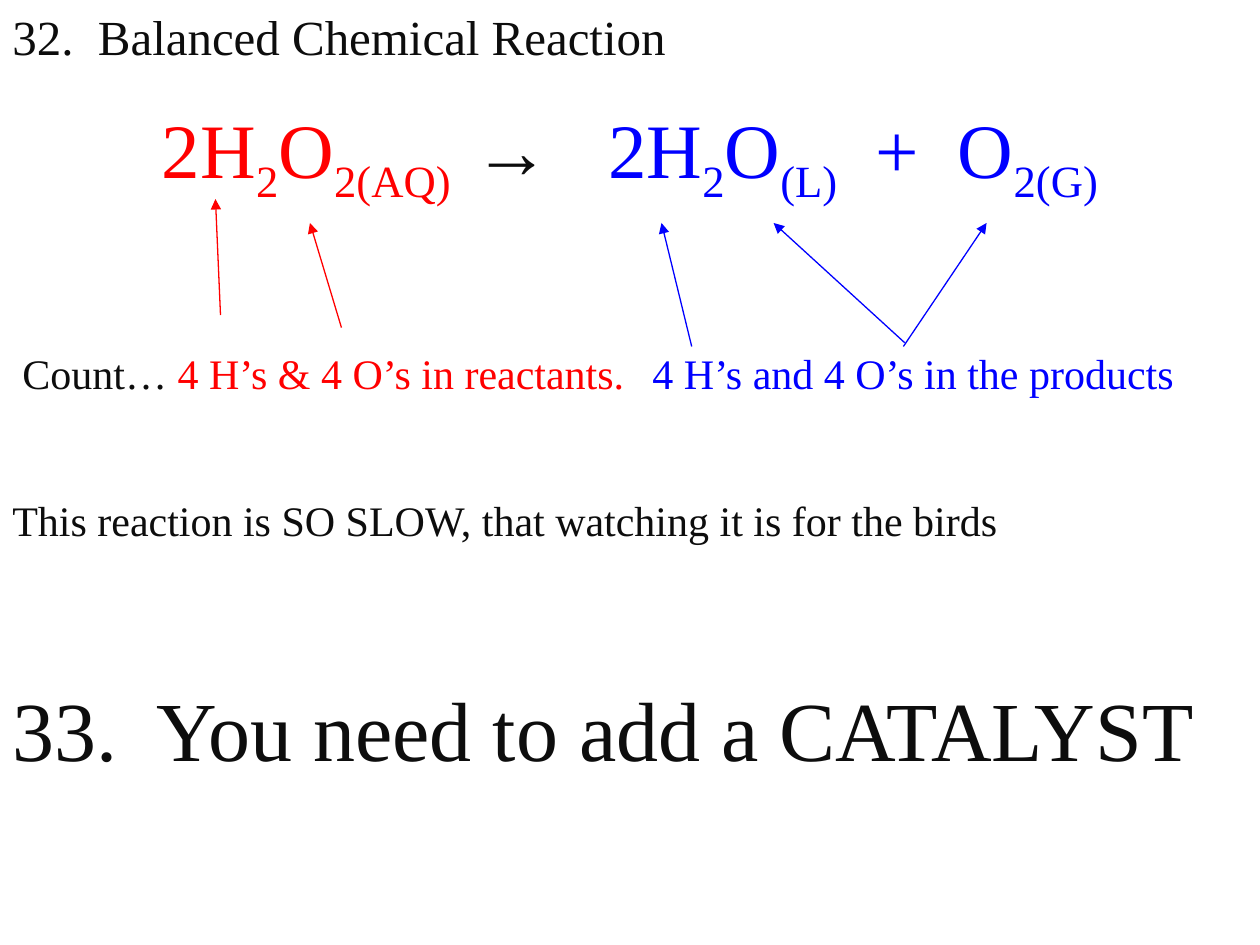
"""Build the slide on balancing the decomposition of hydrogen peroxide."""
from lxml import etree
from pptx import Presentation
from pptx.dml import color
from pptx.enum import shapes, text
from pptx.oxml import ns
from pptx.util import Inches, Pt

FONT = "Times New Roman"
INK, RED, BLUE = "0D0D0D", "FF0000", "0000FF"
SUBSCRIPT = "-25000"

EQUATION = [
    ("2H", RED, False), ("2", RED, True), ("O", RED, False), ("2(AQ)  ", RED, True),
    ("→   ", INK, False),
    ("2H", BLUE, False), ("2", BLUE, True), ("O", BLUE, False), ("(L)", BLUE, True),
    ("  +  O", BLUE, False), ("2(G)", BLUE, True),
]
COUNT = [
    ("Count… ", INK, False),
    ("4 H’s & 4 O’s in reactants.\t", RED, False),
    ("4 H’s and 4 O’s in the products", BLUE, False),
]
SLOW = [("This reaction is SO SLOW, that watching it is for the birds", INK, False)]

TEXT_BOXES = [
    ((0, 0, 10, 2.22), [
        {"spans": [("32.  Balanced Chemical Reaction", INK, False)], "size": 28},
        {"spans": EQUATION, "size": 44, "before": 20.7, "align": text.PP_ALIGN.CENTER},
    ]),
    ((0, 2.71, 10, 3.66), [
        {"spans": COUNT, "size": 24, "indent": 0.08, "tab": 5.19},
        {"spans": SLOW, "size": 24, "before": 55.2},
        {"spans": [("33.  You need to add a CATALYST", INK, False)], "size": 48, "before": 75.9},
    ]),
]
ARROWS = [
    ((1.75, 2.5), (1.71, 1.58), RED),
    ((2.71, 2.6), (2.46, 1.77), RED),
    ((5.49, 2.75), (5.25, 1.77), BLUE),
    ((7.18, 2.72), (6.14, 1.77), BLUE),
    ((7.17, 2.75), (7.83, 1.77), BLUE),
]


def rgb(value):
    return color.RGBColor.from_string(value)


def add_child(parent, tag, **attributes):
    return etree.SubElement(parent, ns.qn(tag), attributes)


def fill_paragraph(para, content):
    formats = {"alignment": content.get("align", text.PP_ALIGN.LEFT),
               "space_before": Pt(content.get("before", 0))}
    for name, value in formats.items():
        setattr(para, name, value)
    properties = para._p.get_or_add_pPr()
    if "indent" in content:
        properties.set("marL", str(Inches(content["indent"])))
        properties.set("indent", "0")
    if "tab" in content:
        stops = add_child(properties, "a:tabLst")
        add_child(stops, "a:tab", pos=str(Inches(content["tab"])), algn="l")
    for words, ink, lowered in content["spans"]:
        span = para.add_run()
        span.text = words
        for name, value in {"name": FONT, "size": Pt(content["size"])}.items():
            setattr(span.font, name, value)
        span.font.color.rgb = rgb(ink)
        if lowered:
            span._r.get_or_add_rPr().set("baseline", SUBSCRIPT)


def add_text(page, place, paragraphs):
    frame = page.shapes.add_textbox(*map(Inches, place)).text_frame
    frame.word_wrap = True
    for index, content in enumerate(paragraphs):
        fill_paragraph(frame.add_paragraph() if index else frame.paragraphs[0], content)


def add_arrow(page, start, end, ink):
    arrow = page.shapes.add_connector(
        shapes.MSO_CONNECTOR.STRAIGHT, *map(Inches, start + end))
    arrow.line.color.rgb = rgb(ink)
    arrow.line.width = Pt(0.75)
    add_child(arrow.line._get_or_add_ln(), "a:tailEnd", type="triangle")
    add_child(arrow._element.spPr, "a:effectLst")


def main():
    deck = Presentation()
    deck.slide_width, deck.slide_height = Inches(10), Inches(7.5)
    page = deck.slides.add_slide(deck.slide_layouts[6])
    for place, paragraphs in TEXT_BOXES:
        add_text(page, place, paragraphs)
    for start, end, ink in ARROWS:
        add_arrow(page, start, end, ink)
    deck.save("out.pptx")


if __name__ == "__main__":
    main()
